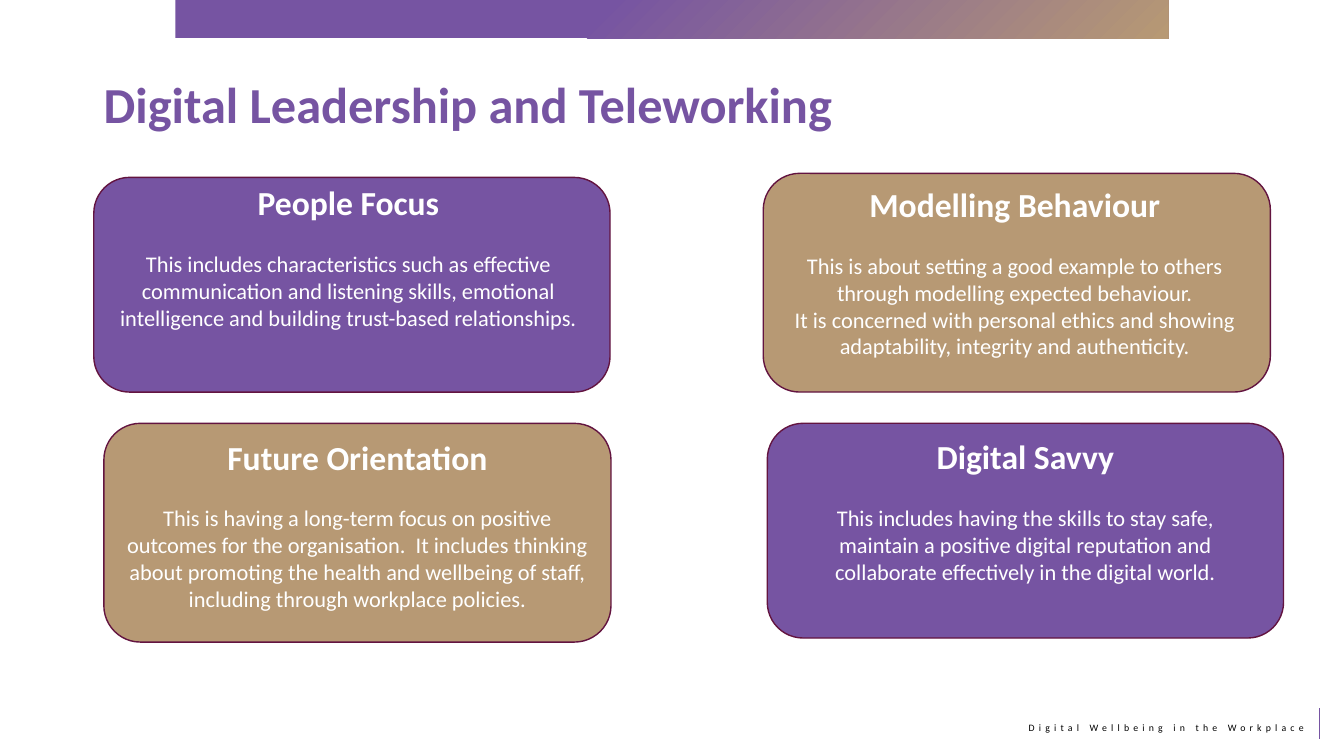
import pptx
import pptx.dml.color
import pptx.enum.shapes
import pptx.enum.text
import pptx.oxml
import pptx.util
from lxml import etree

WIDTH, HEIGHT = pptx.util.Inches(13.33), pptx.util.Inches(7.5)
PURPLE, TAN, WINE, WHITE, BLACK = "7654A2", "B79974", "631440", "FFFFFF", "000000"
SHAPES = pptx.enum.shapes.MSO_SHAPE
ALIGN = pptx.enum.text.PP_ALIGN
NS = "http://schemas.openxmlformats.org/drawingml/2006/main"

# Boxes are (left, top, width, height) in percent of the slide.
BAND = (13.05, 0, 73.89, 5.07)
TITLE = (6.98, 9.07, 85.97, 11.73)
FOOTER = (72.62, 93.6, 25.58, 4.13)

# Each card: box, fill, text inset (left, top, width), heading, paragraphs.
CARDS = [
    ((6.98, 23.47, 38.41, 28.4), PURPLE, (0.45, 0, 36.98), "People Focus",
     ["This includes characteristics such as effective communication and listening skills, "
      "emotional intelligence and building trust-based relationships."]),
    ((56.79, 22.93, 37.73, 28.93), TAN, (0.3, 0.8, 36.83), "Modelling Behaviour",
     ["This is about setting a good example to others through modelling expected behaviour.",
      "It is concerned with personal ethics and showing adaptability, integrity and authenticity."]),
    ((57.09, 56, 38.41, 28.4), PURPLE, (2.25, 1.07, 33.91), "Digital Savvy",
     ["This includes having the skills to stay safe, maintain a positive digital reputation "
      "and collaborate effectively in the digital world."]),
    ((7.73, 56, 37.73, 28.93), TAN, (0, 1.07, 37.73), "Future Orientation",
     ["This is having a long-term focus on positive",
      "outcomes for the organisation.  It includes thinking about promoting the health and "
      "wellbeing of staff, including through workplace policies."]),
]


def rgb(value):
    """Turn a hex string into a colour."""
    return pptx.dml.color.RGBColor.from_string(value)


def place(box):
    """Turn a box in percent of the slide into lengths."""
    x, y, w, h = box
    return [round(share * side / 100) for share, side in
            ((x, WIDTH), (y, HEIGHT), (w, WIDTH), (h, HEIGHT))]


def add_text_frame(slide, box):
    """Add a wrapping text box and return its text frame."""
    tf = slide.shapes.add_textbox(*place(box)).text_frame
    tf.word_wrap = True
    return tf


def write(p, text, size, color, bold=False, align=ALIGN.LEFT):
    """Add one styled run to a paragraph and return it."""
    p.alignment = align
    r = p.add_run()
    r.text = text
    r.font.name = "Calibri"
    r.font.size = pptx.util.Pt(size)
    r.font.bold = bold
    r.font.color.rgb = rgb(color)
    return r


def add_band(slide, box):
    """Draw the top band, shaded from its lower right corner."""
    sp = slide.shapes.add_shape(SHAPES.RECTANGLE, *place(box))
    sp.shadow.inherit = False
    sp.line.fill.background()
    grad = pptx.oxml.parse_xml(
        f'<a:gradFill xmlns:a="{NS}" rotWithShape="1"><a:gsLst>'
        f'<a:gs pos="0"><a:srgbClr val="{TAN}"/></a:gs>'
        f'<a:gs pos="58000"><a:srgbClr val="{PURPLE}"/></a:gs></a:gsLst>'
        '<a:path path="circle"><a:fillToRect l="100000" t="100000"/></a:path></a:gradFill>')
    sp._element.spPr.find(f"{{{NS}}}prstGeom").addnext(grad)


def add_title(slide, box):
    """Write the slide title."""
    tf = add_text_frame(slide, box)
    write(tf.paragraphs[0], "Digital Leadership and Teleworking", 36, PURPLE, bold=True)


def add_card(slide, box, fill, inset, heading, paragraphs):
    """Draw a rounded card with a heading and body text."""
    sp = slide.shapes.add_shape(SHAPES.ROUNDED_RECTANGLE, *place(box))
    sp.shadow.inherit = False
    sp.fill.solid()
    sp.fill.fore_color.rgb = rgb(fill)
    sp.line.color.rgb = rgb(WINE)
    sp.line.width = pptx.util.Pt(1)
    x, y, w, h = box
    dx, dy, text_width = inset
    tf = add_text_frame(slide, (x + dx, y + dy, text_width, h - dy))
    write(tf.paragraphs[0], heading, 24, WHITE, bold=True, align=ALIGN.CENTER)
    for i, text in enumerate(paragraphs):
        p = tf.add_paragraph()
        p.space_before = pptx.util.Pt(0 if i else 19.5)
        write(p, text, 16, WHITE, align=ALIGN.CENTER)


def add_footer(slide, box):
    """Write the spaced footer with a rule at its right edge."""
    x, y, w, h = box
    tf = add_text_frame(slide, (x, y + 1.2, w - 0.45, h - 1.2))
    r = write(tf.paragraphs[0], "Digital Wellbeing in the Workplace", 7, BLACK, align=ALIGN.RIGHT)
    r.font._element.set("spc", "300")
    left, top, width, height = place(box)
    rule = slide.shapes.add_connector(pptx.enum.shapes.MSO_CONNECTOR.STRAIGHT,
                                      left + width, top + height, left + width, top)
    rule.line.color.rgb = rgb(PURPLE)
    rule.line.width = pptx.util.Pt(0.75)
    etree.SubElement(rule._element.spPr, f"{{{NS}}}effectLst")


def main():
    """Build the slide and save it."""
    prs = pptx.Presentation()
    prs.slide_width, prs.slide_height = WIDTH, HEIGHT
    slide = prs.slides.add_slide(prs.slide_layouts[6])
    add_footer(slide, FOOTER)
    add_band(slide, BAND)
    add_title(slide, TITLE)
    for card in CARDS:
        add_card(slide, *card)
    prs.save("out.pptx")


if __name__ == "__main__":
    main()
